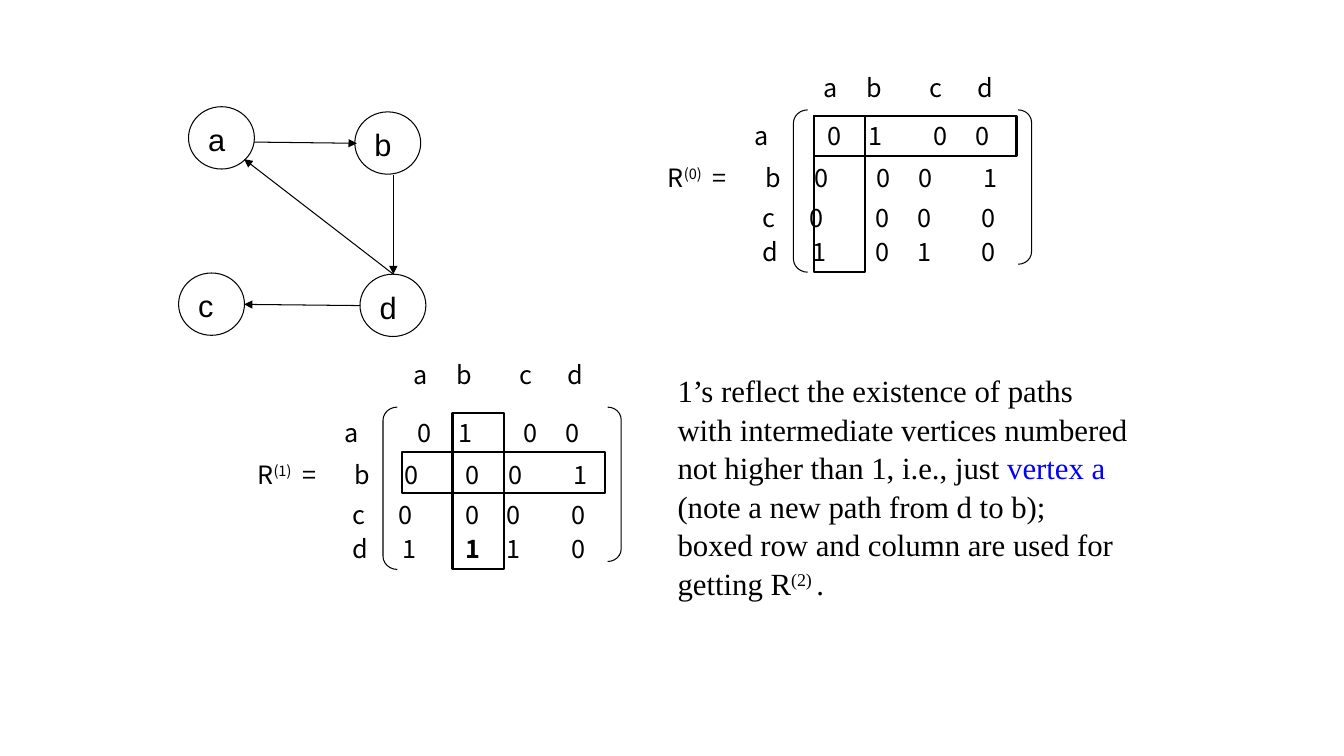
from lxml.etree import SubElement
from pptx import Presentation
from pptx.dml.color import RGBColor
from pptx.enum.shapes import MSO_CONNECTOR, MSO_SHAPE
from pptx.enum.text import MSO_ANCHOR, PP_ALIGN
from pptx.oxml.ns import qn
from pptx.util import Cm, Pt

BLACK = RGBColor(0, 0, 0)
WHITE = RGBColor(255, 255, 255)
BLUE = RGBColor(0, 0, 255)
HEAD = (0.76, 1.84, 3.43, 4.64)
ROWS = [
    (0.13, (-0.98, 0.86, 1.89, 3.53, 4.59)),
    (1.19, (-3.16, -2.04, -0.71, 0.53, 2.09, 3.15, 4.79)),
    (2.21, (-0.78, 0.4, 2.07, 3.12, 4.74)),
    (3.05, (-0.78, 0.48, 2.07, 3.12, 4.74)),
]
NODES = {"c": (4.5, 6.88), "d": (9.07, 6.91), "b": (8.94, 2.82), "a": (4.75, 2.69)}
EDGES = [
    (6.4, 3.58, 8.99, 3.61),
    (9.91, 4.42, 9.91, 6.91),
    (9.91, 6.91, 6.15, 4.01),
    (9.07, 7.7, 6.15, 7.67),
]
NOTE = [
    [("1’s reflect the existence of paths", "")],
    [("with intermediate vertices numbered", "")],
    [("not higher than 1, i.e., just ", ""), ("vertex a", "blue")],
    [("(note a new path from d to b);", "")],
    [("boxed row and column are used for", "")],
    [("getting R", ""), ("(2) ", "super"), (".", "")],
]


class Sketch:
    """Draws graphs, matrices and notes on one slide."""

    def __init__(self, slide):
        self.slide = slide
        self.sans = "Noto Sans CJK SC"
        self.serif = "Times New Roman"

    def style(self, run, face, size, kind=""):
        run.font.name = face
        run.font.size = Pt(size)
        run.font.color.rgb = BLUE if kind == "blue" else BLACK
        if kind == "bold":
            run.font.bold = True
        if kind == "super":
            run.font._element.set("baseline", "30000")

    def fill(self, para, parts, face, size):
        for text, kind in parts:
            run = para.add_run()
            run.text = text
            self.style(run, face, size, kind)

    def frame(self, x, y, w, h):
        box = self.slide.shapes.add_textbox(Cm(x), Cm(y), Cm(w), Cm(h))
        frame = box.text_frame
        frame.word_wrap = True
        frame.margin_left = frame.margin_right = 0
        return frame

    def row(self, x, y, stops, parts):
        first = stops[0]
        para = self.frame(x + first, y, 6 - first, 1.02).paragraphs[0]
        tabs = SubElement(para._p.get_or_add_pPr(), qn("a:tabLst"))
        for stop in stops[1:]:
            SubElement(tabs, qn("a:tab"), pos=str(Cm(stop - first)), algn="l")
        self.fill(para, parts, self.sans, 18)

    def shape(self, kind, x, y, w, h, width=0.75):
        shape = self.slide.shapes.add_shape(kind, Cm(x), Cm(y), Cm(w), Cm(h))
        shape.shadow.inherit = False
        shape.fill.background()
        shape.line.color.rgb = BLACK
        shape.line.width = Pt(width)
        return shape

    def matrix(self, x, y, rise, rows, boxes):
        left = self.shape(MSO_SHAPE.LEFT_BRACKET, x, y, 0.36, 4.09)
        right = self.shape(MSO_SHAPE.RIGHT_BRACKET, x + 5.66, y, 0.34, 3.89)
        for side in (left, right):
            side.adjustments[0] = 0.927
        self.row(x, y - rise, HEAD, [("a\tb\tc\td", "")])
        for (drop, stops), parts in zip(ROWS, rows):
            self.row(x, y + drop, stops, parts)
        for dx, dy, w, h in boxes:
            self.shape(MSO_SHAPE.RECTANGLE, x + dx, y + dy, w, h, 1.5)

    def node(self, name, x, y):
        oval = self.shape(MSO_SHAPE.OVAL, x, y, 1.66, 1.57)
        oval.fill.solid()
        oval.fill.fore_color.rgb = WHITE
        frame = oval.text_frame
        frame.vertical_anchor = MSO_ANCHOR.TOP
        frame.text = name
        para = frame.paragraphs[0]
        para.alignment = PP_ALIGN.LEFT
        self.style(para.runs[0], "Arial", 22)

    def arrow(self, *ends):
        line = self.slide.shapes.add_connector(
            MSO_CONNECTOR.STRAIGHT, *[Cm(end) for end in ends]
        )
        line.line.color.rgb = BLACK
        line.line.width = Pt(0.75)
        SubElement(line.line._get_or_add_ln(), qn("a:tailEnd"), type="triangle")
        SubElement(line._element.spPr, qn("a:effectLst"))

    def note(self, x, y, w, h, lines):
        frame = self.frame(x, y, w, h)
        for i, parts in enumerate(lines):
            para = frame.add_paragraph() if i else frame.paragraphs[0]
            para.space_before = Pt(1.1)
            self.fill(para, parts, self.serif, 22)


def rows(step, last):
    return [
        [("a\t0\t1\t0\t0", "")],
        [("R", ""), (f"({step})", "super"), ("\t=\tb\t0\t0\t0\t1", "")],
        [("c\t0\t0\t0\t0", "")],
        [("d\t1\t", ""), last, ("\t1\t0", "")],
    ]


def main():
    deck = Presentation()
    deck.slide_width, deck.slide_height = Cm(33.86), Cm(19.05)
    sketch = Sketch(deck.slides.add_slide(deck.slide_layouts[6]))
    sketch.matrix(9.65, 10.26, 1.32, rows(1, ("1", "bold")),
                  [(0.48, 1.14, 5.11, 1.02), (1.75, 0.15, 1.3, 3.94)])
    sketch.note(17.07, 9.25, 11.7, 5.89, NOTE)
    for name, spot in NODES.items():
        sketch.node(name, *spot)
    for ends in EDGES:
        sketch.arrow(*ends)
    sketch.matrix(19.99, 2.77, 1.07, rows(0, ("0", "")),
                  [(0.51, 0.15, 5.11, 1.02), (0.51, 0.15, 1.3, 3.94)])
    deck.save("out.pptx")


if __name__ == "__main__":
    main()
